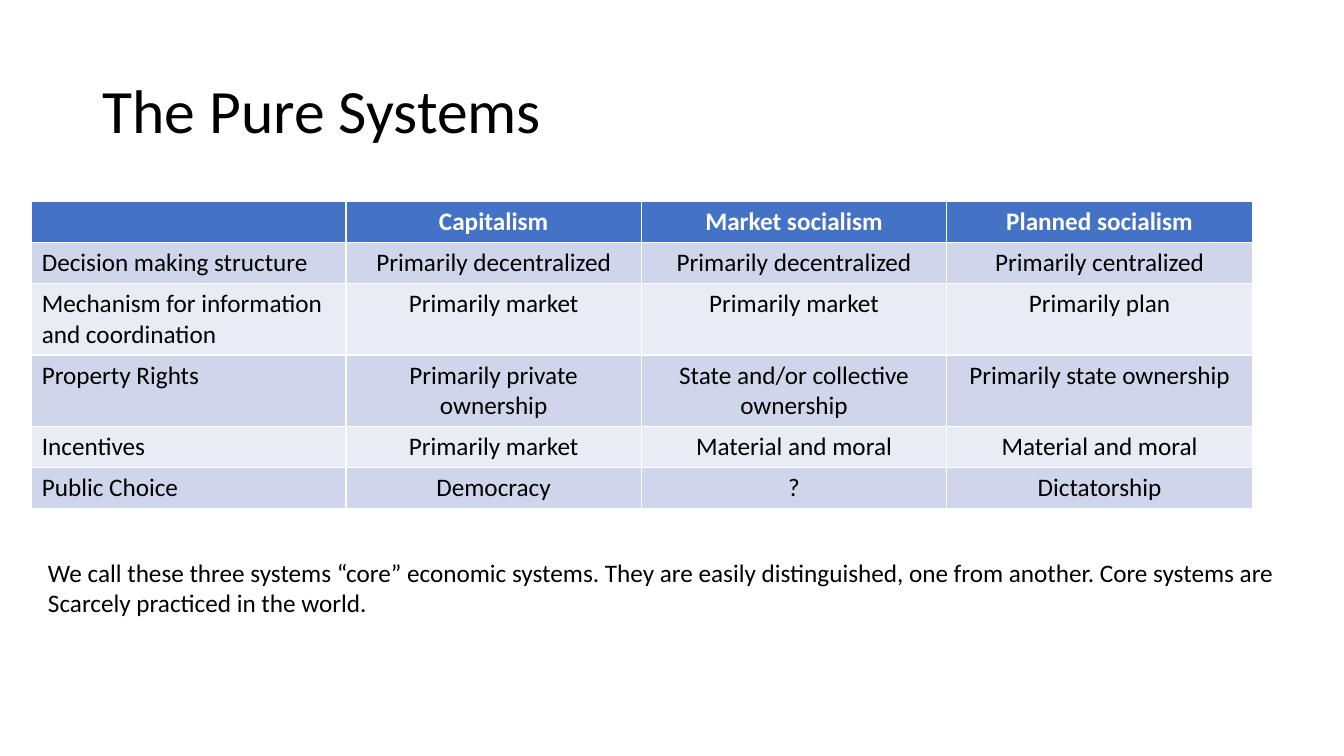
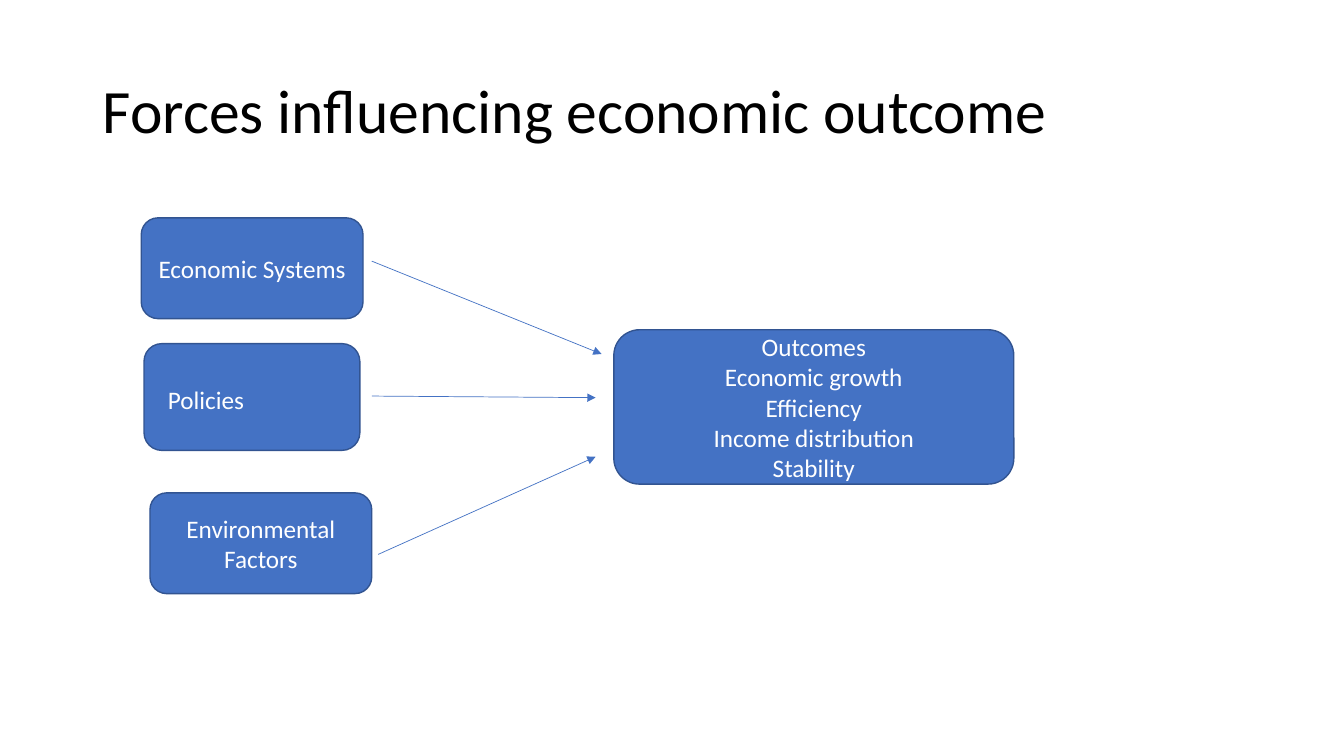
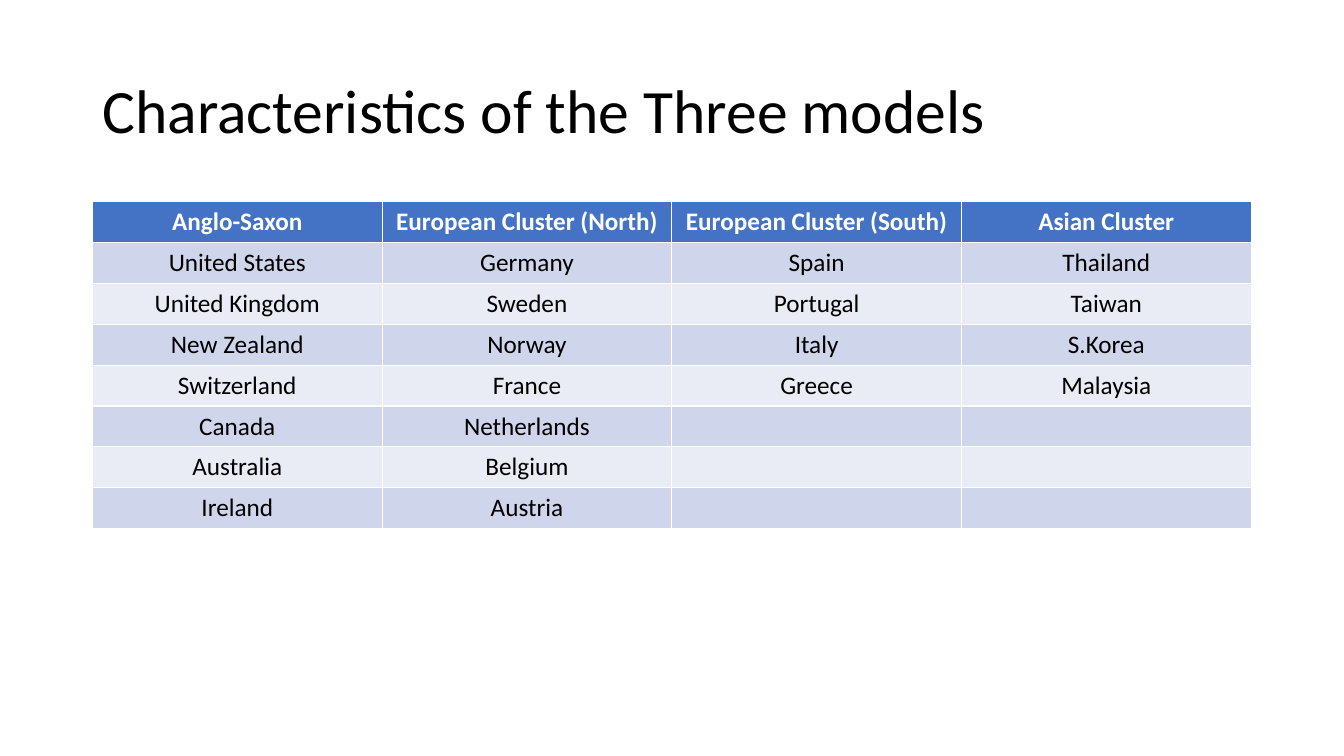
from pptx import Presentation
from pptx.dml.color import RGBColor as Rgb
from pptx.enum.shapes import MSO_CONNECTOR as Conn, MSO_SHAPE as Kind
from pptx.enum.text import MSO_ANCHOR as Anchor, PP_ALIGN as Align
from pptx.oxml.ns import qn
from pptx.util import Cm, Pt
from lxml.etree import SubElement


class Theme:
    font = "Calibri"
    head, body = Pt(44), Pt(18)
    edge_w, arrow_w = Pt(1), Pt(0.5)
    black, white = Rgb(0, 0, 0), Rgb(255, 255, 255)
    blue = Rgb.from_string("4472C4")
    edge = Rgb.from_string("325491")
    bands = Rgb.from_string("CFD5EA"), Rgb.from_string("E9EBF5")


# Content, lengths in centimetres
PURE = "The Pure Systems"
SYSTEMS = [
    ("", "Capitalism", "Market socialism", "Planned socialism"),
    ("Decision making structure", "Primarily decentralized",
     "Primarily decentralized", "Primarily centralized"),
    ("Mechanism for information and coordination", "Primarily market",
     "Primarily market", "Primarily plan"),
    ("Property Rights", "Primarily private ownership",
     "State and/or collective ownership", "Primarily state ownership"),
    ("Incentives", "Primarily market", "Material and moral", "Material and moral"),
    ("Public Choice", "Democracy", "?", "Dictatorship"),
]
NOTE = [
    "We call these three systems “core” economic systems. "
    "They are easily distinguished, one from another. Core systems are",
    "Scarcely practiced in the world.",
]

FORCES = "Forces influencing economic outcome"
BOXES = [  # lines, left, top, width, height
    (["Economic Systems"], 3.56, 5.49, 5.59, 2.54),
    (["Environmental Factors"], 3.78, 12.42, 5.59, 2.54),
    (["Outcomes", "Economic growth", "Efficiency", "Income distribution",
      "Stability"], 15.47, 8.31, 10.08, 3.89),
]
POLICY = ["Policies"], 3.63, 8.66, 5.44, 2.69
ARROWS = [  # from x, y, to x, y
    (9.37, 6.58, 15.16, 8.92),
    (9.37, 9.98, 15.01, 10.02),
    (9.53, 13.97, 15.01, 11.51),
]

MODELS = "Characteristics of the Three models"
GROUPS = {
    "Anglo-Saxon": ["United States", "United Kingdom", "New Zealand",
                    "Switzerland", "Canada", "Australia", "Ireland"],
    "European Cluster (North)": ["Germany", "Sweden", "Norway", "France",
                                 "Netherlands", "Belgium", "Austria"],
    "European Cluster (South)": ["Spain", "Portugal", "Italy", "Greece"],
    "Asian Cluster": ["Thailand", "Taiwan", "S.Korea", "Malaysia"],
}
TABLE_TOP, ROW = 5.08, 1.03


def write(frame, lines, color, align=Align.CENTER, size=Theme.body, bold=False):
    frame.word_wrap = True
    frame.text = "\n".join(lines)
    for par in frame.paragraphs:
        par.alignment = align
        font = par.font
        font.name, font.size, font.bold = Theme.font, size, bold
        font.color.rgb = color


def place(item, *spot):
    item.left, item.top, item.width, item.height = map(Cm, spot)


def add_slide(deck, title):
    slide = deck.slides.add_slide(deck.slide_layouts[5])
    head = slide.shapes.title
    place(head, 2.33, 1.01, 29.21, 3.68)
    write(head.text_frame, [title], Theme.black, Align.LEFT, Theme.head)
    head.text_frame.vertical_anchor = Anchor.MIDDLE
    head.text_frame.paragraphs[0].line_spacing = 0.9
    return slide


def add_grid(slide, rows, left, widths, first=Align.CENTER):
    grid = slide.shapes.add_table(
        len(rows), len(widths), Cm(left), Cm(TABLE_TOP),
        Cm(sum(widths)), Cm(ROW * len(rows))).table
    for col, width in zip(grid.columns, widths):
        col.width = Cm(width)
    for r, row in enumerate(rows):
        grid.rows[r].height = Cm(ROW)
        for c, text in enumerate(row):
            cell = grid.cell(r, c)
            cell.fill.solid()
            cell.fill.fore_color.rgb = Theme.bands[(r - 1) % 2] if r else Theme.blue
            write(cell.text_frame, [text], Theme.black if r else Theme.white,
                  Align.CENTER if c else first, bold=r == 0)


def add_box(slide, lines, *spot, align=Align.CENTER):
    box = slide.shapes.add_shape(Kind.ROUNDED_RECTANGLE, *map(Cm, spot))
    box.shadow.inherit = False
    box.fill.solid()
    box.fill.fore_color.rgb = Theme.blue
    box.line.color.rgb = Theme.edge
    box.line.width = Theme.edge_w
    write(box.text_frame, lines, Theme.white, align)
    box.text_frame.vertical_anchor = Anchor.MIDDLE
    return box


def add_arrow(slide, *ends):
    arrow = slide.shapes.add_connector(Conn.STRAIGHT, *map(Cm, ends))
    arrow.line.color.rgb = Theme.blue
    arrow.line.width = Theme.arrow_w
    props = arrow.line._get_or_add_ln()
    SubElement(props, qn("a:tailEnd")).set("type", "triangle")
    SubElement(props.getparent(), qn("a:effectLst"))


def main():
    deck = Presentation()
    deck.slide_width, deck.slide_height = Cm(33.87), Cm(19.05)

    # Pure systems: table and remark
    slide = add_slide(deck, PURE)
    add_grid(slide, SYSTEMS, 0.8, [7.92, 7.44, 7.7, 7.7], Align.LEFT)
    note = slide.shapes.add_textbox(Cm(0.96), Cm(13.92), Cm(31.9), Cm(1.8))
    write(note.text_frame, NOTE, Theme.black, Align.LEFT)

    # Forces: boxes and arrows
    slide = add_slide(deck, FORCES)
    policy = add_box(slide, *POLICY, align=Align.LEFT).text_frame
    policy.margin_left, policy.margin_top = Cm(0.47), Cm(0.27)
    for box in BOXES:
        add_box(slide, *box)
    for ends in ARROWS:
        add_arrow(slide, *ends)

    # Models: one column per group
    slide = add_slide(deck, MODELS)
    count = max(map(len, GROUPS.values()))
    cols = [[name, *lands] + [""] * (count - len(lands))
            for name, lands in GROUPS.items()]
    add_grid(slide, list(zip(*cols)), 2.33, [7.3] * len(cols))

    deck.save("out.pptx")


if __name__ == "__main__":
    main()
